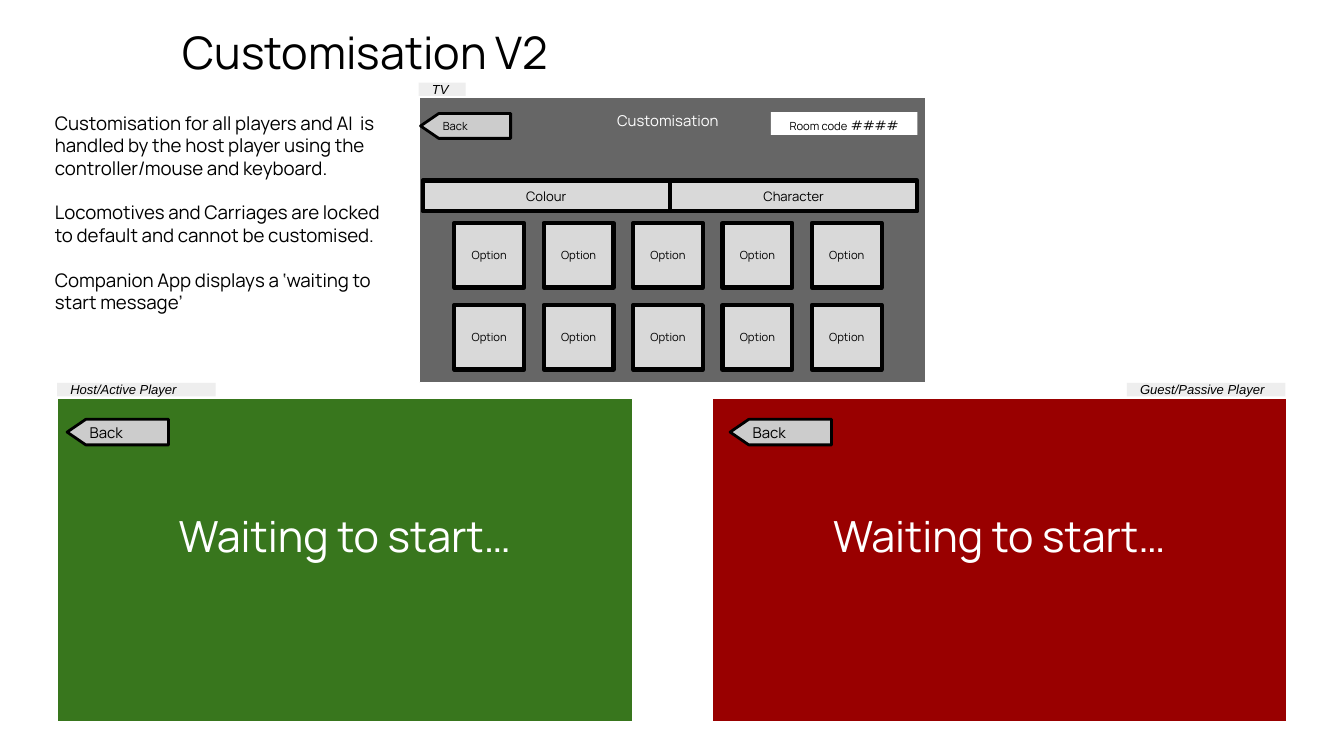
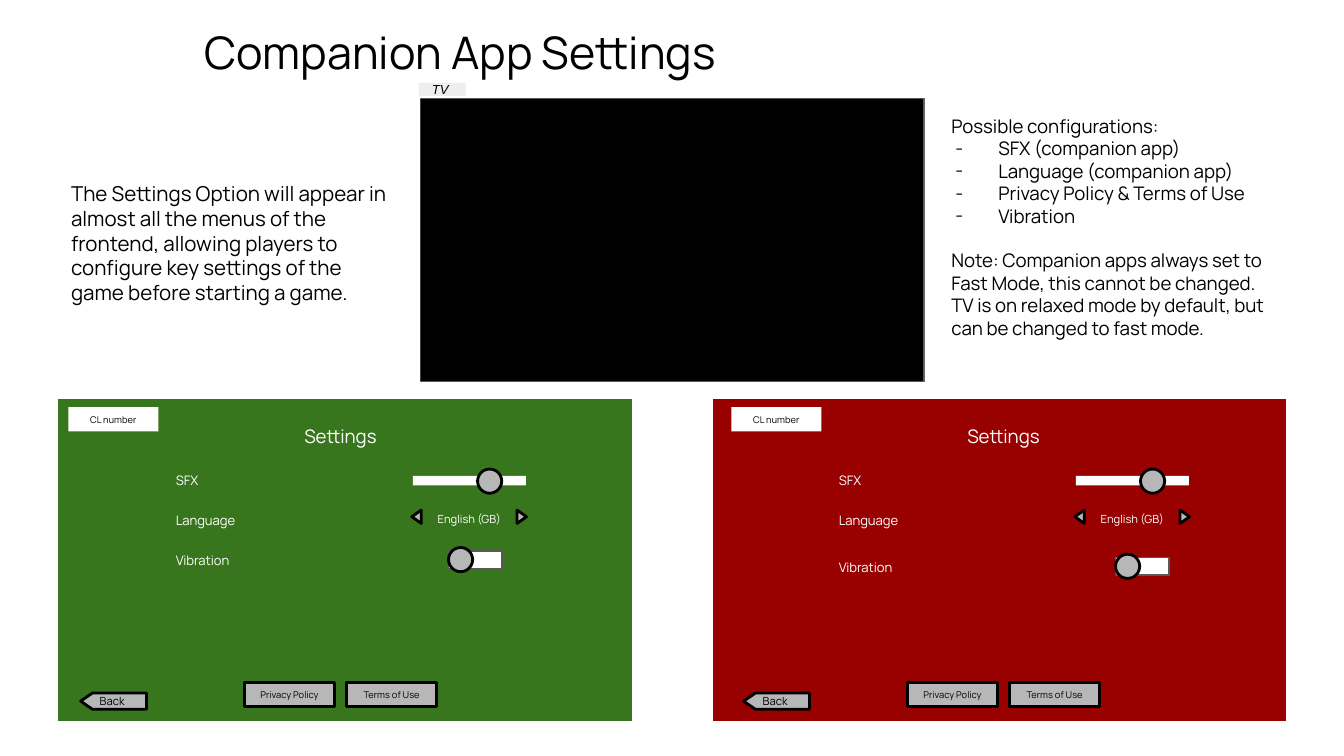
from lxml import etree
from pptx import Presentation
from pptx import util as u
from pptx.dml.color import RGBColor
from pptx.enum import shapes, text
from pptx.oxml.ns import qn

WIDTH = u.Inches(10)
HEIGHT = u.Emu(WIDTH * 9 // 16)
COLUMNS = 100
CELL = WIDTH / COLUMNS
FONT, LABEL_FONT = "Manrope", "Arial"
COLORS = {
    "black": "000000", "white": "FFFFFF", "host": "38761D", "guest": "990000",
    "screen": "666666", "label": "EEEEEE", "option": "D9D9D9",
    "back": "CCCCCC", "control": "B7B7B7", "edge": "595959",
}
KIND = shapes.MSO_SHAPE
ALIGN, ANCHOR = text.PP_ALIGN, text.MSO_ANCHOR
PANEL_TOP, PANEL_W, PANEL_H = 29.67, 42.75, 24.07
PANELS = {"host": 4.3, "guest": 53}
GUEST_SHIFT = 0.63


def color(name):
    """Return the named colour."""
    return RGBColor.from_string(COLORS[name])


def grid(*cells):
    """Turn grid cells into lengths."""
    return [u.Emu(round(c * CELL)) for c in cells]


def add_bullet(p, mark="-"):
    """Give a paragraph a hanging bullet."""
    pPr = p._p.get_or_add_pPr()
    pPr.set("marL", str(u.Inches(0.35)))
    pPr.set("indent", str(u.Inches(-0.32)))
    clr = etree.SubElement(pPr, qn("a:buClr"))
    etree.SubElement(clr, qn("a:srgbClr")).set("val", COLORS["black"])
    etree.SubElement(pPr, qn("a:buFont")).set("typeface", FONT)
    etree.SubElement(pPr, qn("a:buChar")).set("char", mark)


def write(sp, paragraphs, size=10, ink="black", font=FONT, italic=False,
          align=ALIGN.LEFT, anchor=ANCHOR.MIDDLE, bottom=0.1, gaps=(), bullets=()):
    """Fill a shape with paragraphs, each a string or a list of (text, size) runs."""
    tf = sp.text_frame
    tf.word_wrap = True
    tf.auto_size = text.MSO_AUTO_SIZE.NONE
    tf.vertical_anchor = anchor
    tf.margin_left = tf.margin_right = tf.margin_top = u.Inches(0.1)
    tf.margin_bottom = u.Inches(bottom)
    if isinstance(paragraphs, str):
        paragraphs = [paragraphs]
    for i, content in enumerate(paragraphs):
        p = tf.add_paragraph() if i else tf.paragraphs[0]
        p.alignment = align
        if i in gaps:
            p.space_before = u.Pt(12)
        if i in bullets:
            add_bullet(p)
        runs = [(content, size)] if isinstance(content, str) else content
        for words, points in runs:
            r = p.add_run()
            r.text = words
            r.font.name, r.font.size, r.font.italic = font, u.Pt(points), italic
            r.font.color.rgb = color(ink)


def add_text(s, box, words, **fmt):
    """Add a text box."""
    sp = s.shapes.add_textbox(*grid(*box))
    write(sp, words, **fmt)


def add_block(s, box, fill, line=None, weight=1.5, kind=KIND.RECTANGLE,
              words=None, flip=False, turn=0, **fmt):
    """Add a filled shape, with text if given."""
    sp = s.shapes.add_shape(kind, *grid(*box))
    sp.shadow.inherit = False
    sp.fill.solid()
    sp.fill.fore_color.rgb = color(fill)
    if line:
        sp.line.color.rgb = color(line)
        sp.line.width = u.Pt(weight)
    else:
        sp.line.fill.background()
    sp.rotation = turn
    if flip:
        sp.element.spPr.xfrm.set("flipH", "1")
    if words:
        write(sp, words, **fmt)
    return sp


def add_button(s, box, words, size, fill="option", line="black", weight=2.25):
    """Add a box with a centred caption."""
    add_block(s, box, fill, line, weight, words=words, size=size, align=ALIGN.CENTER)


def add_back(s, box, size, fill="back"):
    """Add a Back button that points left."""
    sp = add_block(s, box, fill, "black", kind=KIND.PENTAGON, flip=True,
                   words="Back", size=size)
    sp.adjustments[0] = 0.73


def add_label(s, x, y, w, words):
    """Add a small grey screen label."""
    add_block(s, (x, y, w, 1), "label", words=words, size=7,
              font=LABEL_FONT, italic=True)


def add_knob(s, x, y):
    """Add the round handle of a slider or switch."""
    add_block(s, (x, y, 1.8, 1.8), "control", "black", kind=KIND.OVAL)


def add_frame(prs, title, left):
    """Add a slide with its title, two phone panels and a TV screen."""
    s = prs.slides.add_slide(prs.slide_layouts[5])
    sp = s.shapes.title
    sp.left, sp.top, sp.width, sp.height = grid(left, 0.7, COLUMNS - left, 6.3)
    write(sp, title, size=24)
    for name, x in PANELS.items():
        add_block(s, (x, PANEL_TOP, PANEL_W, PANEL_H), name, "white", 0.75)
    add_block(s, (31.2, 7.27, 37.7, 21.2), "screen", "white", 0.75)
    add_label(s, 31.15, 6.15, 3.5, "TV")
    return s


def add_settings(s, x, switch_dx=0, switch_dy=0):
    """Add the settings menu of one phone, from its left edge."""
    y = PANEL_TOP
    add_button(s, (x + 0.8, y + 0.63, 6.7, 1.8), "CL number", 5, "white", None)
    add_text(s, (x + 15.33, y + 1.7, 11.4, 2.2), "Settings", ink="white",
             align=ALIGN.CENTER)
    for words, dy in (("SFX", 5), ("Language", 7.93), ("Vibration", 10.93 + switch_dy)):
        add_text(s, (x + 7.8, y + dy, 14, 2.2), words, size=7, ink="white")
    add_block(s, (x + 26.43, y + 5.75, 8.4, 0.7), "white")
    add_knob(s, x + 31.23, y + 5.23)
    add_text(s, (x + 26.87, y + 7.88, 7.5, 2.2), "English (GB)", size=6,
             ink="white", align=ALIGN.CENTER)
    for dx, turn in ((26.2, 270), (34.03, 90)):
        add_block(s, (x + dx, y + 8.43, 1, 0.7), "control", "black",
                  kind=KIND.ISOSCELES_TRIANGLE, turn=turn, flip=turn == 90)
    switch = x + 29.07 + switch_dx
    add_block(s, (switch, y + 11.33 + switch_dy, 4, 1.3), "white", "edge", 0.75)
    add_knob(s, switch, y + 11.07 + switch_dy)
    add_back(s, (x + 1.7, y + 21.9, 4.9, 1.2), 6, "control")
    for i, words in enumerate(("Privacy Policy", "Terms of Use")):
        add_button(s, (x + 13.9 + 7.6 * i, y + 21.13, 6.7, 1.8), words, 5,
                   "control", weight=1.5)


def build_customisation(prs):
    """Build the slide on the customisation screen."""
    s = add_frame(prs, "Customisation V2", 12.6)
    add_label(s, 4.25, 28.5, 11.8, "Host/Active Player")
    add_label(s, 83.85, 28.5, 11.8, "Guest/Passive Player")
    add_text(s, (3.1, 6.9, 27.2, 21.1), [
        "Customisation for all players and AI  is handled by the host player "
        "using the controller/mouse and keyboard.",
        "Locomotives and Carriages are locked to default and cannot be customised.",
        "Companion App displays a ‘waiting to start message’",
    ], gaps=(1, 2), bottom=0.43)
    add_button(s, (57.35, 8.35, 10.9, 1.7),
               [[("Room code", 6), (" ", 9), ("####", 7)]], 6, "white", None)
    add_back(s, (31.3, 8.45, 6.7, 1.85), 6)
    add_text(s, (41.7, 7.6, 16, 1.4), "Customisation", size=8, ink="white",
             align=ALIGN.CENTER, anchor=ANCHOR.TOP)
    for i, words in enumerate(("Colour", "Character")):
        add_button(s, (31.45 + 18.4 * i, 13.43, 18.4, 2.3), words, 7)
    for row in range(2):
        for col in range(5):
            add_button(s, (33.8 + 6.65 * col, 16.6 + 6.1 * row, 5.2, 4.8), "Option", 6)
    for x, shift in zip(PANELS.values(), (0, GUEST_SHIFT)):
        add_back(s, (x + 0.7 + shift, 31.2, 7.55, 1.9), 8)
        add_text(s, (x, 36.9, PANEL_W, 10.5), "Waiting to start…", size=23,
                 ink="white", align=ALIGN.CENTER, anchor=ANCHOR.TOP)


def build_app_settings(prs):
    """Build the slide on the companion app settings."""
    s = add_frame(prs, "Companion App Settings", 14.2)
    add_block(s, (31.3, 7.37, 37.4, 21), "black")
    add_settings(s, PANELS["host"])
    add_settings(s, PANELS["guest"] + GUEST_SHIFT, switch_dx=0.3, switch_dy=0.5)
    add_text(s, (4.3, 7.53, 25.9, 21.1),
             "The Settings Option will appear in almost all the menus of the "
             "frontend, allowing players to configure key settings of the game "
             "before starting a game.", size=11)
    add_text(s, (69.8, 7.53, 25.9, 21.1), [
        "Possible configurations:",
        "SFX (companion app)",
        "Language (companion app)",
        "Privacy Policy & Terms of Use",
        "Vibration",
        "Note: Companion apps always set to Fast Mode, this cannot be changed. "
        "TV is on relaxed mode by default, but can be changed to fast mode.",
    ], anchor=ANCHOR.TOP, bullets=range(1, 5), gaps=(5,))


def main():
    """Build and save the deck."""
    prs = Presentation()
    prs.slide_width, prs.slide_height = WIDTH, HEIGHT
    build_customisation(prs)
    build_app_settings(prs)
    prs.save("out.pptx")


if __name__ == "__main__":
    main()
